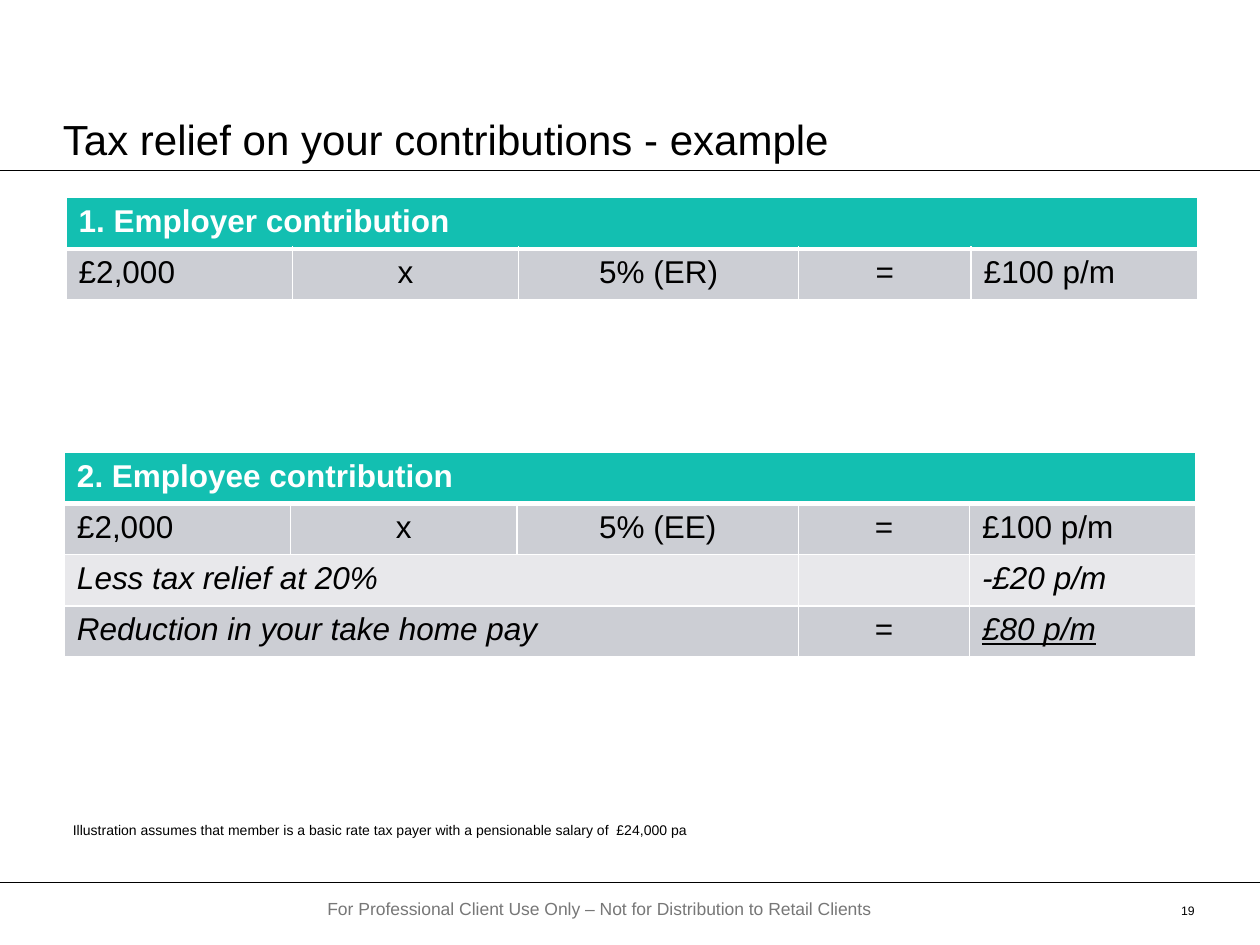
from lxml import etree
from pptx import Presentation
from pptx.dml.color import RGBColor
from pptx.enum.shapes import MSO_CONNECTOR
from pptx.enum.text import MSO_ANCHOR, PP_ALIGN
from pptx.oxml.ns import qn
from pptx.util import Pt

LINE = MSO_CONNECTOR.STRAIGHT
TOP, BOTTOM = MSO_ANCHOR.TOP, MSO_ANCHOR.BOTTOM
LEFT, CENTER, RIGHT = PP_ALIGN.LEFT, PP_ALIGN.CENTER, PP_ALIGN.RIGHT
FONT = "Arial"
WIDTH, HEIGHT = 720, 540
ROW = 29.2
HEX = {"ink": "000000", "paper": "FFFFFF", "muted": "777777",
       "head": "13BFB1", "dark": "CCCED4", "light": "E8E8EB"}


def color(name):
    return RGBColor.from_string(HEX[name])


def write(frame, text, size, ink="ink", align=LEFT, bold=False, italic=False, under=False):
    para = frame.paragraphs[0]
    para.alignment = align
    run = para.add_run()
    run.text = text
    font = run.font
    font.name, font.size, font.bold = FONT, Pt(size), bold
    font.italic, font.underline = italic, under
    font.color.rgb = color(ink)


def add_text(slide, box, text, size, ink="ink", align=LEFT, anchor=TOP, pads=(0, 0, 0, 0)):
    frame = slide.shapes.add_textbox(*map(Pt, box)).text_frame
    frame.word_wrap = True
    frame.vertical_anchor = anchor
    (frame.margin_left, frame.margin_top,
     frame.margin_right, frame.margin_bottom) = map(Pt, pads)
    write(frame, text, size, ink, align)


def add_rule(slide, top):
    rule = slide.shapes.add_connector(LINE, 0, Pt(top), Pt(WIDTH), Pt(top))
    rule.line.color.rgb = color("ink")
    rule.line.width = Pt(0.25)
    etree.SubElement(rule._element.spPr, qn("a:effectLst"))


def add_edges(cell, base):
    props = cell._tc.get_or_add_tcPr()
    for side, width in (("L", 1), ("R", 1), ("T", 1), ("B", base)):
        edge = etree.SubElement(props, qn(f"a:ln{side}"), w=str(Pt(width)))
        fill = etree.SubElement(edge, qn("a:solidFill"))
        etree.SubElement(fill, qn("a:srgbClr"), val=HEX["paper"])


def add_sum(slide, left, top, cols, title, rows):
    count = len(rows) + 1
    table = slide.shapes.add_table(count, len(cols), Pt(left), Pt(top),
                                   Pt(sum(cols)), Pt(ROW * count)).table
    for col, width in zip(table.columns, cols):
        col.width = Pt(width)
    for y, row in enumerate(table.rows):
        row.height = Pt(ROW)
        fill = "head" if y == 0 else "dark" if y % 2 else "light"
        for cell in row.cells:
            add_edges(cell, 1 if y else 3)
            cell.fill.solid()
            cell.fill.fore_color.rgb = color(fill)
    table.cell(0, 0).merge(table.cell(0, len(cols) - 1))
    write(table.cell(0, 0).text_frame, title, 18, "paper", bold=True)
    for y, texts in enumerate(rows, 1):
        note = not texts[1]
        if note:
            table.cell(y, 0).merge(table.cell(y, 2))
        for x, text in enumerate(texts):
            if text:
                write(table.cell(y, x).text_frame, text, 18,
                      align=CENTER if 0 < x < 4 else LEFT,
                      italic=note and x != 3, under=y == 3 and x == 4)


def add_header(slide, left, top, width, height):
    add_text(slide, (left, top, width, height),
             "Tax relief on your contributions - example", 24,
             anchor=BOTTOM, pads=(0, 0, 0, 3.6))
    add_rule(slide, top + height)


def add_footer(slide, top):
    add_rule(slide, top)
    add_text(slide, (180, top + 5.8, 360, 19.4),
             "For Professional Client Use Only – Not for Distribution to Retail Clients",
             10, "muted", pads=(7.2, 3.6, 7.2, 3.6))
    add_text(slide, (653.8, top + 12.2, 28.8, 21.6), "19", 7, align=RIGHT)


def main():
    deck = Presentation()
    deck.slide_width, deck.slide_height = Pt(WIDTH), Pt(HEIGHT)
    slide = deck.slides.add_slide(deck.slide_layouts[6])
    add_header(slide, 36, 36, 648, 61.2)
    add_sum(slide, 37.8, 113, (129.3, 129.3, 160, 98.6, 129.3),
            "1. Employer contribution",
            [("£2,000", "x", "5% (ER)", "=", "£100 p/m")])
    add_sum(slide, 36.8, 258.6, (129.3, 129.3, 161, 97.6, 129.3),
            "2. Employee contribution",
            [("£2,000", "x", "5% (EE)", "=", "£100 p/m"),
             ("Less tax relief at 20%", "", "", "", "-£20 p/m"),
             ("Reduction in your take home pay", "", "", "=", "£80 p/m")])
    add_text(slide, (36, 469.4, 363, 22.3),
             "Illustration assumes that member is a basic rate tax payer "
             "with a pensionable salary of  £24,000 pa", 8, align=CENTER)
    add_footer(slide, 504)
    deck.save("out.pptx")


if __name__ == "__main__":
    main()
